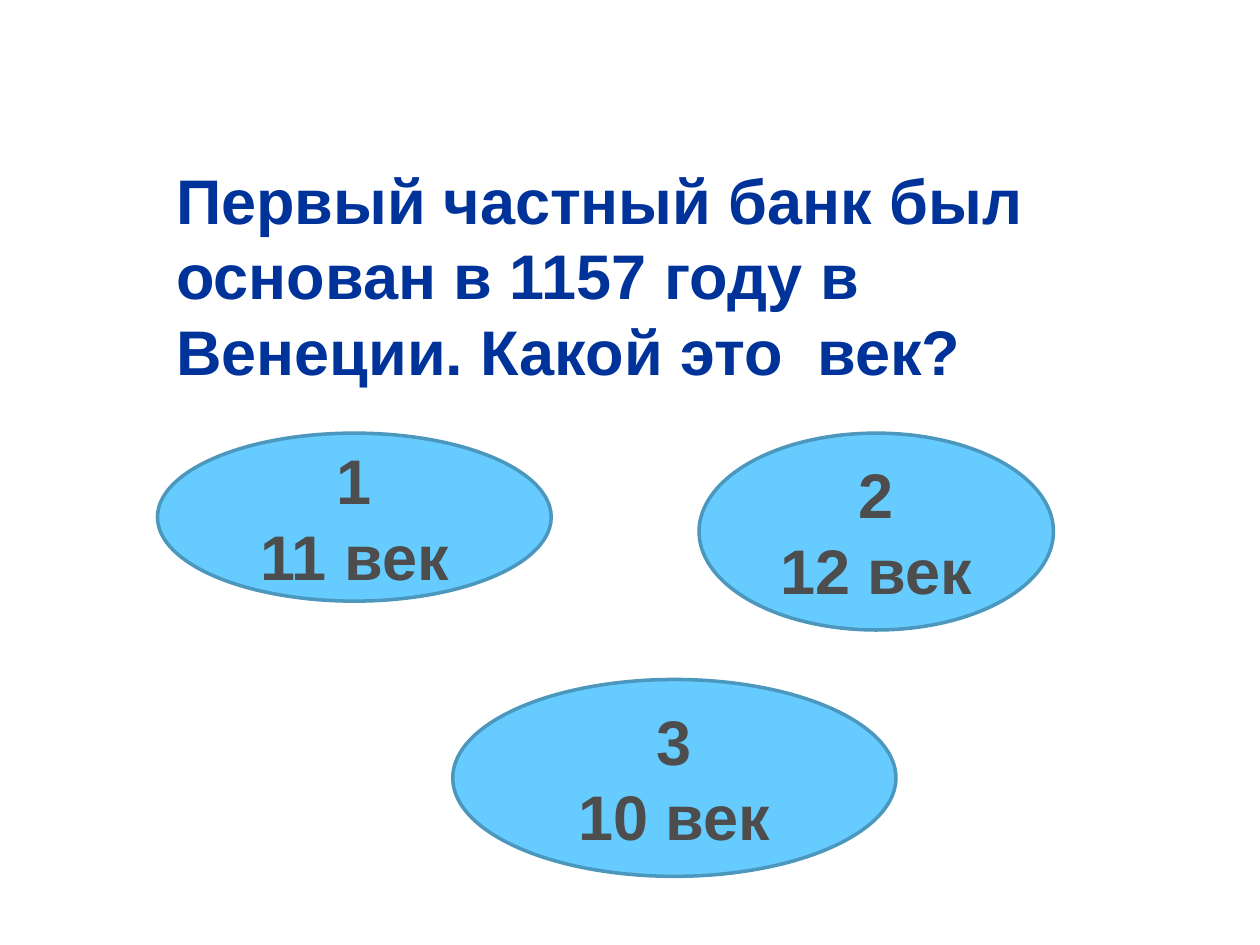
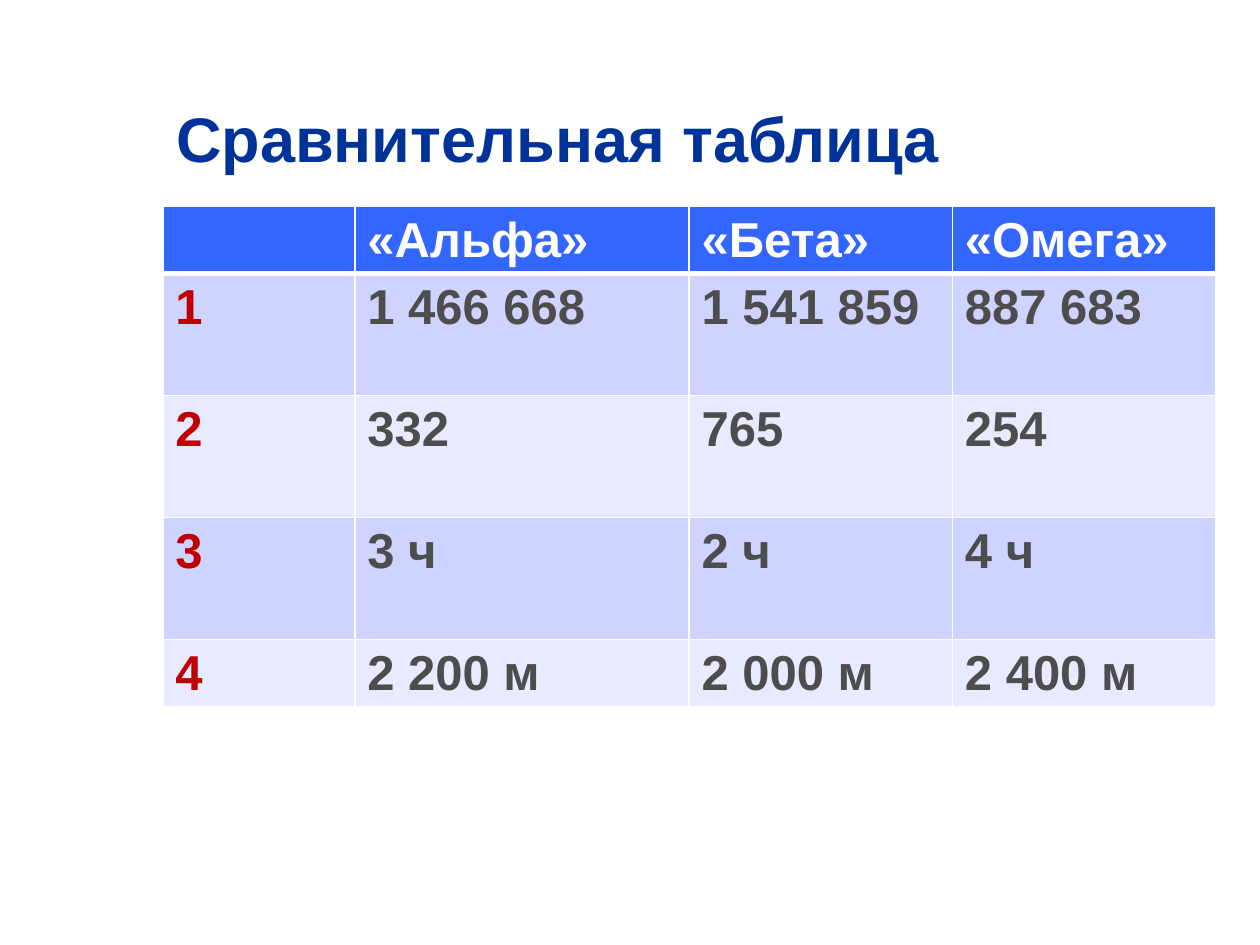
import pptx
import pptx.util
import pptx.dml.color
import pptx.enum.shapes
import pptx.enum.text
import pptx.oxml
import pptx.oxml.ns

Pt = pptx.util.Pt
RGBColor = pptx.dml.color.RGBColor
ALIGN = pptx.enum.text.PP_ALIGN
MIDDLE = pptx.enum.text.MSO_ANCHOR.MIDDLE

FONT = "Arial"
NAVY = RGBColor(0x00, 0x33, 0x99)
GRAY = RGBColor(0x4D, 0x4D, 0x4D)
RED = RGBColor(0xC0, 0x00, 0x00)
WHITE = RGBColor(0xFF, 0xFF, 0xFF)
SKY = RGBColor(0x66, 0xCC, 0xFF)
SKY_EDGE = RGBColor(0x4B, 0x97, 0xBD)
HEADER_BLUE = RGBColor(0x33, 0x66, 0xFF)
BANDS = (RGBColor(0xCE, 0xD3, 0xFF), RGBColor(0xE8, 0xEA, 0xFF))

QUESTION = "Первый частный банк был основан в 1157 году в Венеции. Какой это  век?"
ANSWERS = [
    ("11 век", (90, 247.5, 225, 96)),
    ("12 век", (399.5, 247.5, 202.5, 112.5)),
    ("10 век", (258.75, 388.25, 253.25, 112.5)),
]

TABLE_TITLE = "Сравнительная таблица"
TABLE_ROWS = [
    ("", "«Альфа»", "«Бета»", "«Омега»"),
    ("1", "1 466 668", "1 541 859", "887 683"),
    ("2", "332", "765", "254"),
    ("3", "3 ч", "2 ч", "4 ч"),
    ("4", "2 200 м", "2 000 м", "2 400 м"),
]
COLUMN_WIDTHS = (109.75, 191, 150.5, 150.5)
ROW_HEIGHTS = (38, 69.7, 69.7, 69.7, 38)


def write(frame, text, size=36, color=GRAY, align=ALIGN.LEFT):
    frame.text = text
    frame.word_wrap = True
    for para in frame.paragraphs:
        para.alignment = align
        for span in para.runs:
            span.font.name = FONT
            span.font.size = Pt(size)
            span.font.bold = True
            span.font.color.rgb = color


def add_page(deck, title, top, height):
    page = deck.slides.add_slide(deck.slide_layouts[5])
    box = page.shapes.title
    box.left, box.top, box.width, box.height = Pt(93.5), Pt(top), Pt(516.25), Pt(height)
    write(box.text_frame, title, color=NAVY)
    box.text_frame.vertical_anchor = MIDDLE
    box.text_frame.auto_size = pptx.enum.text.MSO_AUTO_SIZE.NONE
    return page


def add_answer(page, number, answer, place):
    oval = page.shapes.add_shape(
        pptx.enum.shapes.MSO_SHAPE.OVAL, *(Pt(length) for length in place))
    oval.shadow.inherit = False
    oval.fill.solid()
    oval.fill.fore_color.rgb = SKY
    oval.line.color.rgb = SKY_EDGE
    oval.line.width = Pt(2)
    write(oval.text_frame, f"{number}\n{answer}", align=ALIGN.CENTER)
    oval.text_frame.vertical_anchor = MIDDLE


def add_border(cell, side, width):
    properties = cell._tc.get_or_add_tcPr()
    properties.append(pptx.oxml.parse_xml(
        f'<a:{side} {pptx.oxml.ns.nsdecls("a")} w="{Pt(width)}">'
        f'<a:solidFill><a:srgbClr val="{WHITE}"/></a:solidFill></a:{side}>'))


def add_comparison(page):
    table = page.shapes.add_table(
        len(TABLE_ROWS), len(COLUMN_WIDTHS), Pt(93), Pt(118),
        Pt(sum(COLUMN_WIDTHS)), Pt(sum(ROW_HEIGHTS))).table
    for column, width in zip(table.columns, COLUMN_WIDTHS):
        column.width = Pt(width)
    for row, height in zip(table.rows, ROW_HEIGHTS):
        row.height = Pt(height)
    for r, values in enumerate(TABLE_ROWS):
        for c, value in enumerate(values):
            cell = table.cell(r, c)
            for side in ("lnL", "lnR", "lnT", "lnB"):
                on_header_edge = (r, side) in ((0, "lnB"), (1, "lnT"))
                add_border(cell, side, 3 if on_header_edge else 1)
            cell.fill.solid()
            cell.fill.fore_color.rgb = BANDS[(r - 1) % 2] if r else HEADER_BLUE
            color = WHITE if r == 0 else RED if c == 0 else GRAY
            write(cell.text_frame, value, size=28, color=color)


def main():
    deck = pptx.Presentation()
    deck.slide_width, deck.slide_height = Pt(720), Pt(540)
    quiz = add_page(deck, QUESTION, top=92, height=130)
    for number, (answer, place) in enumerate(ANSWERS, 1):
        add_answer(quiz, number, answer, place)
    add_comparison(add_page(deck, TABLE_TITLE, top=44.5, height=67.75))
    deck.save("out.pptx")


if __name__ == "__main__":
    main()
